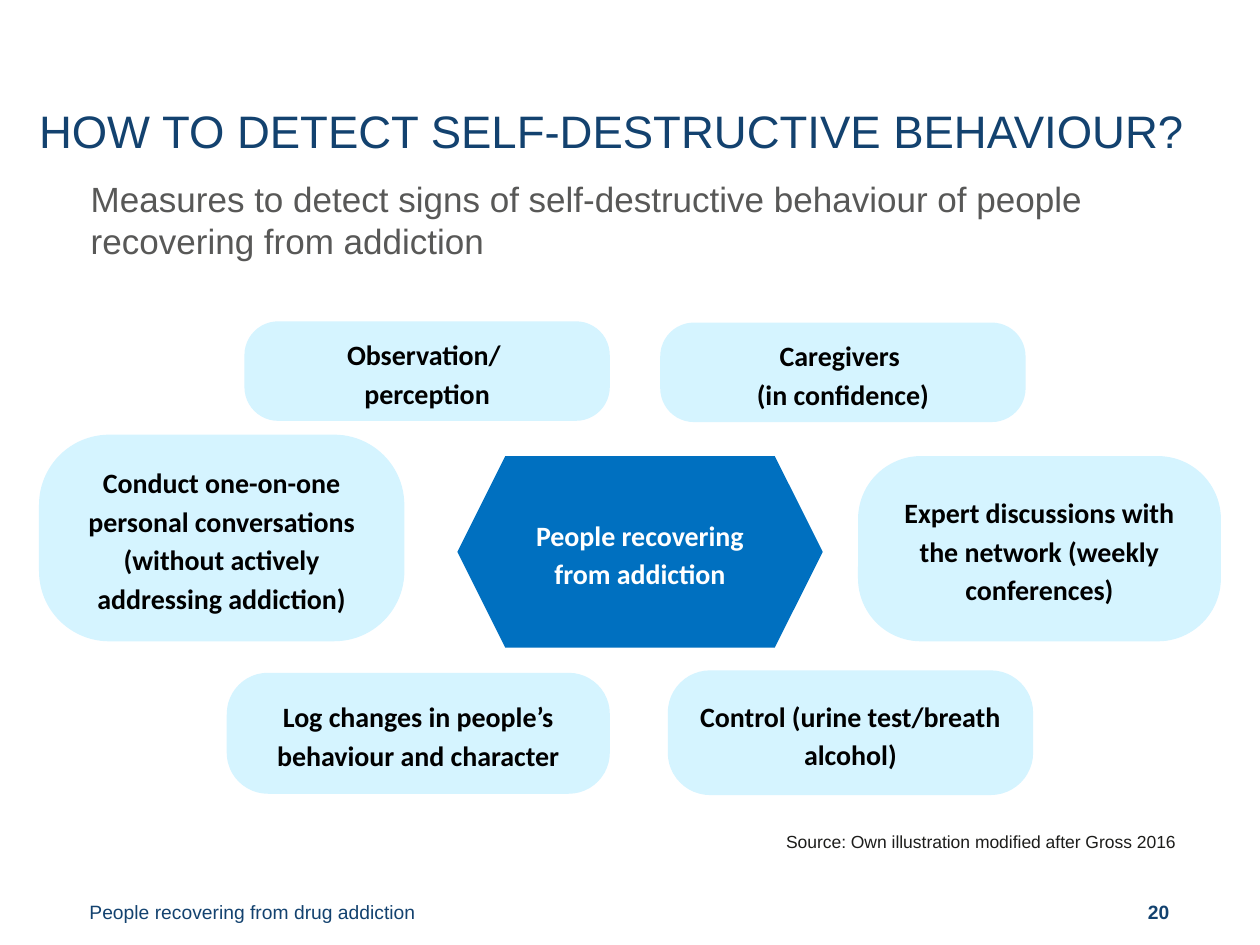
import pptx
import pptx.util
import pptx.dml.color
import pptx.enum.shapes
import pptx.enum.text

Inches = pptx.util.Inches
Pt = pptx.util.Pt
RGBColor = pptx.dml.color.RGBColor
SHAPE = pptx.enum.shapes.MSO_SHAPE
ALIGN = pptx.enum.text.PP_ALIGN
ANCHOR = pptx.enum.text.MSO_ANCHOR
AUTO_SIZE = pptx.enum.text.MSO_AUTO_SIZE

NAVY = RGBColor(0x13, 0x42, 0x6F)
GREY = RGBColor(0x58, 0x58, 0x57)
INK = RGBColor(0x1D, 0x1D, 0x1B)
PALE_BLUE = RGBColor(0xD5, 0xF4, 0xFF)
BLUE = RGBColor(0x00, 0x70, 0xC0)
BLACK = RGBColor(0, 0, 0)
WHITE = RGBColor(0xFF, 0xFF, 0xFF)


def write(shape, lines, size, color, font="Arial", bold=False, align=ALIGN.LEFT,
          anchor=ANCHOR.TOP, insets=(0.1, 0.05, 0.1, 0.05), spacing=None):
    """Fill a shape with one paragraph, its lines parted by line breaks."""
    frame = shape.text_frame
    frame.word_wrap = True
    frame.auto_size = AUTO_SIZE.NONE
    frame.vertical_anchor = anchor
    (frame.margin_left, frame.margin_top,
     frame.margin_right, frame.margin_bottom) = [Inches(i) for i in insets]
    paragraph = frame.paragraphs[0]
    paragraph.alignment = align
    if spacing:
        paragraph.line_spacing = spacing
    for number, line in enumerate(lines):
        if number:
            paragraph.add_line_break()
        run = paragraph.add_run()
        run.text = line
        run.font.name = font
        run.font.size = Pt(size)
        run.font.bold = bold
        run.font.color.rgb = color
    return paragraph


def add_bubble(kind, box, lines, fill, color):
    """Add a filled shape of the diagram with its centred label."""
    bubble = slide.shapes.add_shape(kind, *[Inches(v) for v in box])
    bubble.shadow.inherit = False
    bubble.fill.solid()
    bubble.fill.fore_color.rgb = fill
    bubble.line.fill.background()
    write(bubble, lines, 16, color, font="Calibri", bold=True,
          align=ALIGN.CENTER, anchor=ANCHOR.MIDDLE, spacing=1.15)
    return bubble


presentation = pptx.Presentation()
presentation.slide_width = Inches(10)
presentation.slide_height = Inches(7.5)
slide = presentation.slides.add_slide(presentation.slide_layouts[5])

# Title
title = slide.shapes.title
title.left, title.top = Inches(0.31), Inches(0.73)
title.width, title.height = Inches(9.38), Inches(0.84)
write(title, ["HOW TO DETECT SELF-DESTRUCTIVE BEHAVIOUR?"], 26, NAVY,
      insets=(0, 0.05, 0.1, 0.05), spacing=Pt(34))

# Subtitle
subtitle = slide.shapes.add_textbox(Inches(0.72), Inches(1.37), Inches(8.55), Inches(0.92))
write(subtitle, ["Measures to detect signs of self-destructive behaviour of people "
                 "recovering from addiction"], 20, GREY,
      insets=(0, 0.04, 0.1, 0.05), spacing=Pt(24))

# Measures around the centre
measures = [
    ((5.24, 2.56, 2.9, 0.79), ["Caregivers ", "(in confidence)"]),
    ((1.94, 2.55, 2.9, 0.79), ["Observation/ ", "perception"]),
    ((0.31, 3.45, 2.9, 1.64), ["Conduct one-on-one personal conversations "
                               "(without actively addressing addiction)"]),
    ((5.3, 5.32, 2.9, 0.99), ["Control (urine test/breath alcohol)"]),
    ((1.8, 5.34, 3.04, 0.96), ["Log changes in people’s behaviour and character"]),
    ((6.81, 3.62, 2.88, 1.47), ["Expert discussions with the network (weekly conferences)"]),
]
for box, lines in measures:
    measure = add_bubble(SHAPE.ROUNDED_RECTANGLE, box, lines, PALE_BLUE, BLACK)
    measure.adjustments[0] = 0.34

# Centre
add_bubble(SHAPE.HEXAGON, (3.63, 3.62, 2.9, 1.52),
           ["People recovering from addiction"], BLUE, WHITE)

# Source line
source = slide.shapes.add_textbox(Inches(6.14), Inches(6.55), Inches(3.4), Inches(0.27))
write(source, ["Source: Own illustration modified after Gross 2016"], 10, INK)

# Footer and page number
footer = slide.shapes.add_textbox(Inches(0), Inches(6.89), Inches(3.38), Inches(0.6))
write(footer, ["People recovering from drug addiction"], 11, NAVY,
      anchor=ANCHOR.BOTTOM, insets=(0.71, 0.05, 0, 0.16), spacing=Pt(13.3))
page_number = slide.shapes.add_textbox(Inches(7.74), Inches(6.89), Inches(2.25), Inches(0.6))
write(page_number, ["20"], 11, NAVY, bold=True, align=ALIGN.RIGHT,
      anchor=ANCHOR.BOTTOM, insets=(0, 0.05, 0.71, 0.16), spacing=Pt(13.3))

presentation.save("out.pptx")
